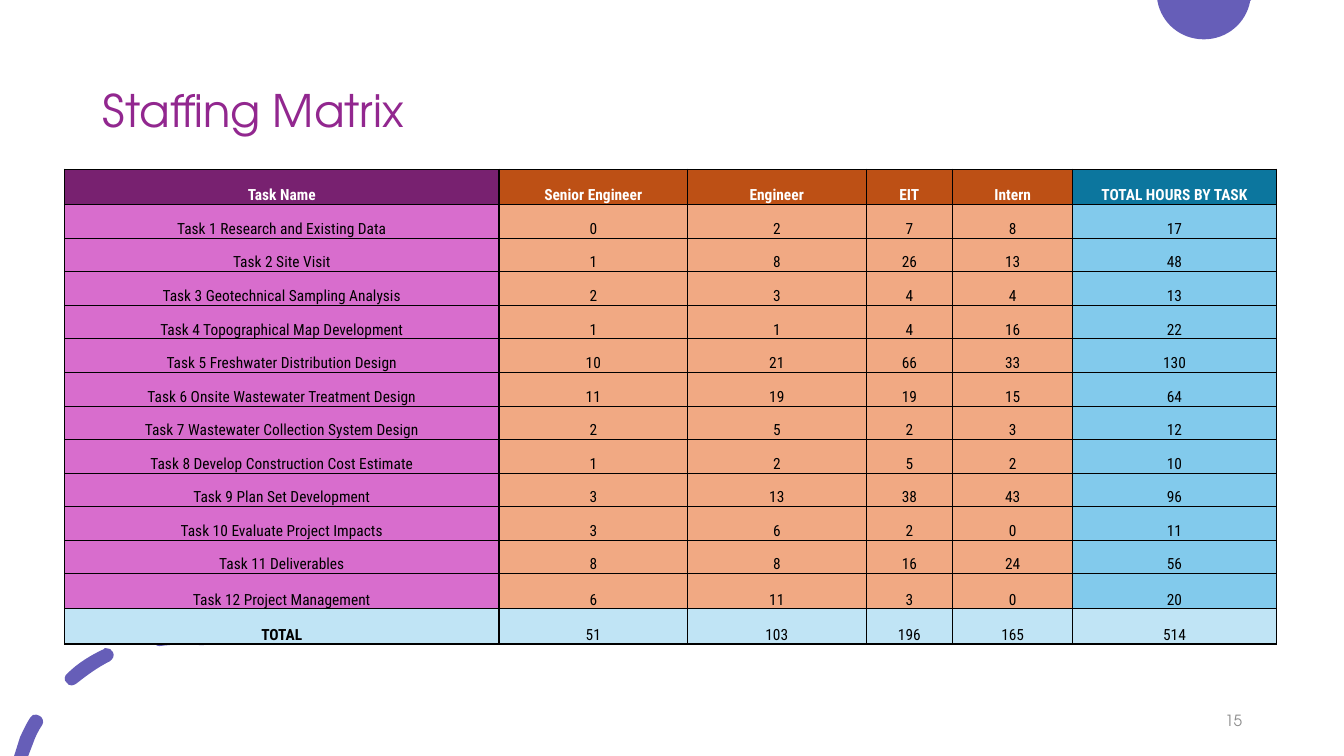
from lxml.etree import Element, SubElement
from pptx import Presentation
from pptx.dml.color import RGBColor
from pptx.enum.text import MSO_ANCHOR, PP_ALIGN
from pptx.oxml.ns import qn
from pptx.util import Inches, Pt

WHITE = RGBColor(0xFF, 0xFF, 0xFF)
BLACK = RGBColor(0x00, 0x00, 0x00)
GREY = RGBColor(0x8C, 0x8C, 0x8C)
VIOLET = RGBColor(0x66, 0x5E, 0xB8)
MAGENTA = RGBColor(0x92, 0x27, 0x8F)
PLUM = RGBColor(0x78, 0x21, 0x70)
PINK = RGBColor(0xD8, 0x6D, 0xCD)
RUST = RGBColor(0xBD, 0x50, 0x15)
PEACH = RGBColor(0xF1, 0xA9, 0x83)
TEAL = RGBColor(0x0C, 0x76, 0x9E)
SKY = RGBColor(0x82, 0xCA, 0xEC)
PALE_BLUE = RGBColor(0xC0, 0xE4, 0xF5)

TITLE_FONT = "TeX Gyre Adventor"
TABLE_FONT = "Roboto Condensed"

# Outlines: a start point, then lines (x, y) and cubic curves (three points).
HALF_DISC = [
    (11.48, 0), (12.41, 0), (12.4, 0.01),
    (12.36, 0.23, 12.17, 0.39, 11.94, 0.39),
    (11.71, 0.39, 11.52, 0.23, 11.48, 0.01),
]
DASHES = [
    [(0.36, 7.09), (0.34, 7.08, 0.31, 7.1, 0.3, 7.12),
     (0.26, 7.18, 0.23, 7.25, 0.2, 7.31), (0.14, 7.5), (0.28, 7.5), (0.33, 7.37),
     (0.35, 7.31, 0.38, 7.25, 0.42, 7.19), (0.44, 7.16, 0.42, 7.11, 0.39, 7.1),
     (0.38, 7.09, 0.37, 7.09, 0.36, 7.09)],
    [(1.05, 6.43), (1.04, 6.43, 1.03, 6.43, 1.03, 6.44),
     (0.9, 6.5, 0.77, 6.58, 0.67, 6.68), (0.64, 6.7, 0.63, 6.75, 0.66, 6.77),
     (0.67, 6.79, 0.69, 6.8, 0.71, 6.8), (0.73, 6.8, 0.74, 6.79, 0.76, 6.78),
     (0.86, 6.7, 0.97, 6.62, 1.09, 6.56), (1.12, 6.54, 1.14, 6.5, 1.12, 6.47),
     (1.11, 6.44, 1.08, 6.43, 1.05, 6.43)],
    [(1.79, 6.25), (1.72, 6.25, 1.65, 6.26, 1.58, 6.27),
     (1.54, 6.27, 1.51, 6.31, 1.52, 6.35), (1.52, 6.38, 1.55, 6.41, 1.58, 6.41),
     (1.73, 6.39, 1.86, 6.39, 1.99, 6.4), (2.03, 6.41, 2.07, 6.38, 2.07, 6.35),
     (2.08, 6.31, 2.05, 6.27, 2.01, 6.27), (1.94, 6.26, 1.86, 6.25, 1.79, 6.25)],
]

COLUMN_WIDTHS = [4.31, 1.87, 1.77, 0.86, 1.19, 2.02]
TABLE_HEIGHT = 4.71
TALL_ROW = 0.35
STAFFING = [
    ("Task Name", "Senior Engineer", "Engineer", "EIT", "Intern", "TOTAL HOURS BY TASK"),
    ("Task 1 Research and Existing Data", 0, 2, 7, 8, 17),
    ("Task 2 Site Visit", 1, 8, 26, 13, 48),
    ("Task 3 Geotechnical Sampling Analysis", 2, 3, 4, 4, 13),
    ("Task 4 Topographical Map Development", 1, 1, 4, 16, 22),
    ("Task 5 Freshwater Distribution Design", 10, 21, 66, 33, 130),
    ("Task 6 Onsite Wastewater Treatment Design", 11, 19, 19, 15, 64),
    ("Task 7 Wastewater Collection System Design", 2, 5, 2, 3, 12),
    ("Task 8 Develop Construction Cost Estimate", 1, 2, 5, 2, 10),
    ("Task 9 Plan Set Development", 3, 13, 38, 43, 96),
    ("Task 10 Evaluate Project Impacts", 3, 6, 2, 0, 11),
    ("Task 11 Deliverables", 8, 8, 16, 24, 56),
    ("Task 12 Project Management", 6, 11, 3, 0, 20),
    ("TOTAL", 51, 103, 196, 165, 514),
]
LAST_ROW = len(STAFFING) - 1
LAST_COL = len(COLUMN_WIDTHS) - 1


def add_run(p, text, font, size, color, bold=False):
    r = p.add_run()
    r.text = text
    r.font.name = font
    r.font.size = Pt(size)
    r.font.bold = bold
    r.font.color.rgb = color


def add_text(s, text, box, size, color, align=PP_ALIGN.LEFT, spacing=1.0):
    tf = s.shapes.add_textbox(*map(Inches, box)).text_frame
    tf.word_wrap = True
    tf.vertical_anchor = MSO_ANCHOR.MIDDLE
    p = tf.paragraphs[0]
    p.alignment = align
    p.line_spacing = spacing
    add_run(p, text, TITLE_FONT, size, color)


def bend_lines(sp, segments):
    """Give the lines that stand for curves their two control points."""
    lines = list(sp._element.iter(qn("a:lnTo")))
    for line, segment in zip(lines, segments):
        if len(segment) == 6:
            line.tag = qn("a:cubicBezTo")
            for i in (0, 1):
                x, y = segment[2 * i:2 * i + 2]
                line.insert(i, Element(qn("a:pt"), x=str(Inches(x) - sp.left),
                                       y=str(Inches(y) - sp.top)))


def add_outlines(s, outlines):
    """Draw closed outlines as one violet freeform."""
    builder = None
    for outline in outlines:
        start, *ends = [tuple(map(Inches, segment[-2:])) for segment in outline]
        if builder is None:
            builder = s.shapes.build_freeform(*start)
        else:
            builder.move_to(*start)
        builder.add_line_segments(ends, close=True)
    sp = builder.convert_to_shape()
    bend_lines(sp, [segment for outline in outlines for segment in outline[1:]])
    sp.shadow.inherit = False
    sp.fill.solid()
    sp.fill.fore_color.rgb = VIOLET
    sp.line.fill.background()


def set_borders(cell, row, col):
    """Thick lines round the header, the total row and the outer columns."""
    thick = {
        "a:lnL": col in (0, 1, LAST_COL),
        "a:lnR": col in (0, LAST_COL - 1, LAST_COL),
        "a:lnT": row in (0, 1, LAST_ROW),
        "a:lnB": row in (0, LAST_ROW - 1, LAST_ROW),
    }
    tcPr = cell._tc.get_or_add_tcPr()
    for tag, is_thick in thick.items():
        ln = SubElement(tcPr, qn(tag), w=str(Pt(1 if is_thick else 0.5)))
        fill = SubElement(ln, qn("a:solidFill"))
        SubElement(fill, qn("a:srgbClr"), val=str(BLACK))


def cell_color(row, col):
    if row == LAST_ROW:
        return PALE_BLUE
    header, body = {0: (PLUM, PINK), LAST_COL: (TEAL, SKY)}.get(col, (RUST, PEACH))
    return header if row == 0 else body


def fill_cell(cell, value, row, col):
    set_borders(cell, row, col)
    cell.fill.solid()
    cell.fill.fore_color.rgb = cell_color(row, col)
    cell.vertical_anchor = MSO_ANCHOR.BOTTOM
    cell.margin_left = cell.margin_right = cell.margin_top = Inches(0.01)
    cell.margin_bottom = 0
    p = cell.text_frame.paragraphs[0]
    p.alignment = PP_ALIGN.CENTER
    bold = row == 0 or (row == LAST_ROW and col == 0)
    add_run(p, str(value), TABLE_FONT, 11, WHITE if row == 0 else BLACK, bold)


def add_staffing_table(s):
    table = s.shapes.add_table(
        len(STAFFING), len(COLUMN_WIDTHS), Inches(0.64), Inches(1.68),
        Inches(sum(COLUMN_WIDTHS)), Inches(TABLE_HEIGHT)).table
    table.first_row = table.horz_banding = False
    for column, width in zip(table.columns, COLUMN_WIDTHS):
        column.width = Inches(width)
    tall_rows = (0, LAST_ROW - 1, LAST_ROW)
    task_row = (TABLE_HEIGHT - 3 * TALL_ROW) / (len(STAFFING) - 3)
    for row, values in enumerate(STAFFING):
        table.rows[row].height = Inches(TALL_ROW if row in tall_rows else task_row)
        for col, value in enumerate(values):
            fill_cell(table.cell(row, col), value, row, col)


def main():
    prs = Presentation()
    prs.slide_width = Inches(13.33)
    prs.slide_height = Inches(7.5)
    s = prs.slides.add_slide(prs.slide_layouts[6])
    add_outlines(s, [HALF_DISC])
    add_outlines(s, DASHES)
    add_text(s, "Staffing Matrix", (0.92, 0.4, 11.5, 1.45), 32, MAGENTA, spacing=0.9)
    add_text(s, "15", (9.42, 6.95, 3, 0.4), 11, GREY, PP_ALIGN.RIGHT)
    add_staffing_table(s)
    prs.save("out.pptx")


if __name__ == "__main__":
    main()
